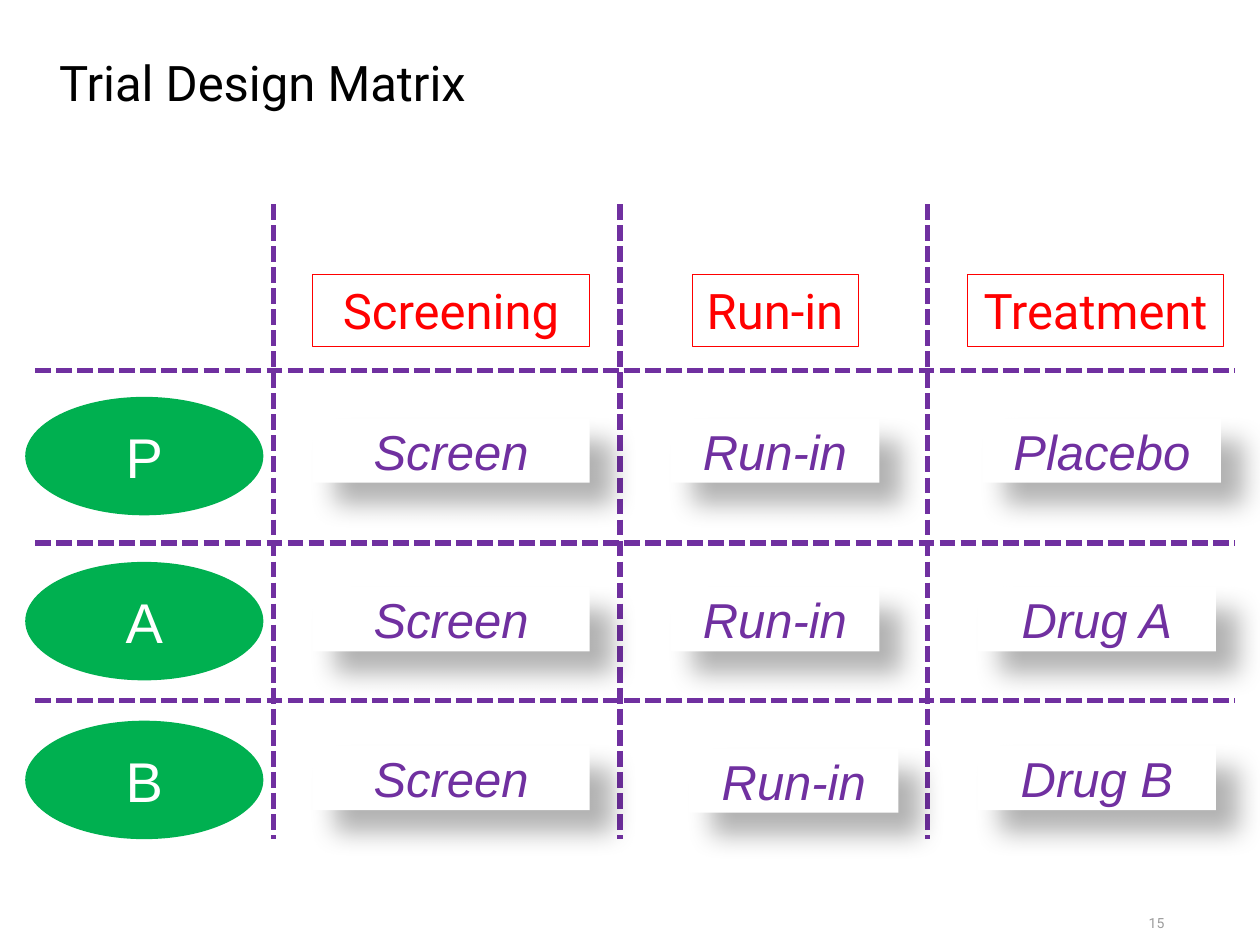
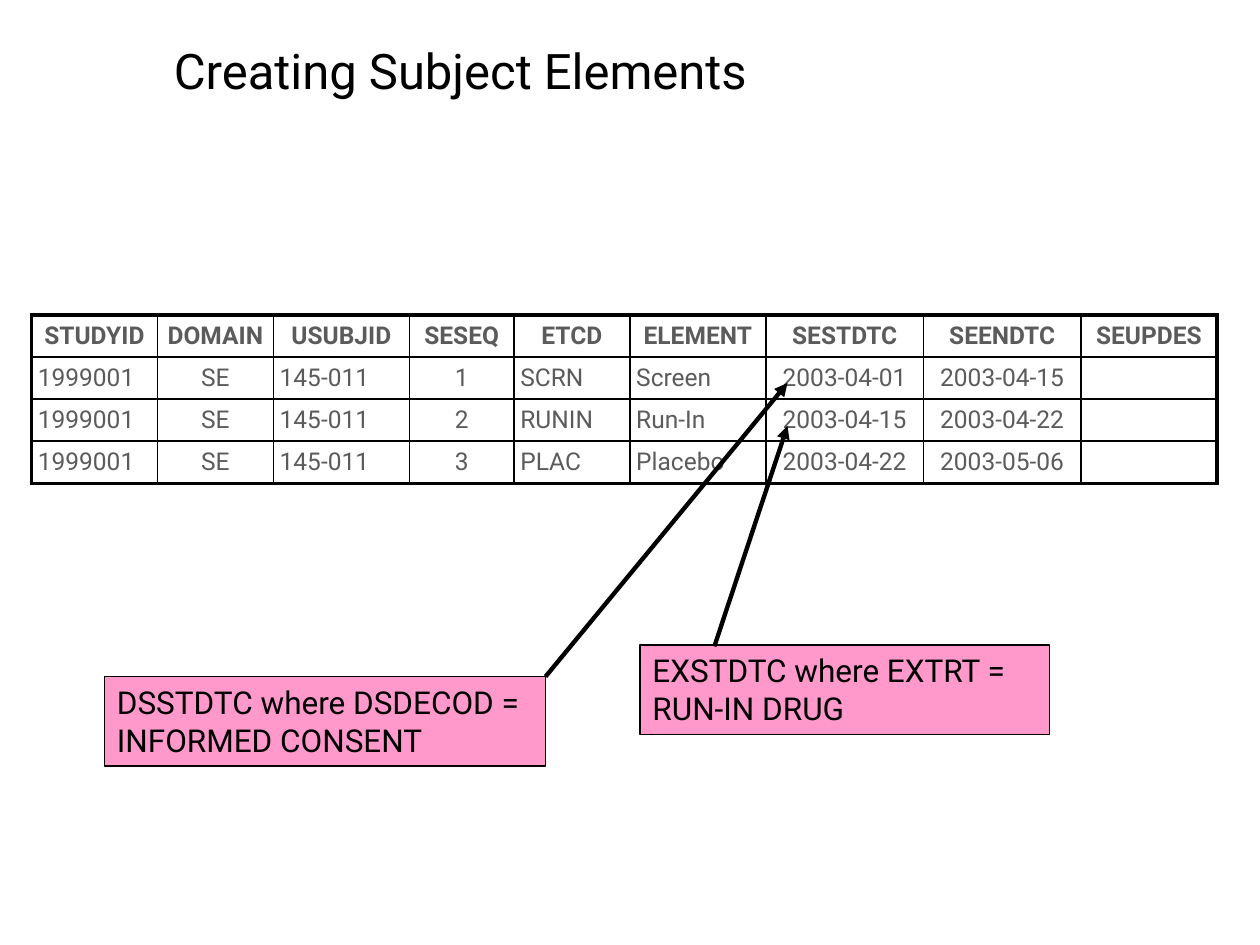
"""Build two slides on trial design: the design matrix and the subject elements table."""
import lxml.etree
import pptx
import pptx.dml.color
import pptx.enum.dml
import pptx.enum.shapes
import pptx.enum.text
import pptx.oxml.ns
import pptx.util

PX = 9144
COLORS = {
    "black": "000000",
    "white": "FFFFFF",
    "purple": "7030A0",
    "red": "FF0000",
    "green": "00B050",
    "pink": "FF99CC",
    "cell_text": "5B5B5B",
    "page_number": "9C9C9C",
}
RGB = {name: pptx.dml.color.RGBColor.from_string(code) for name, code in COLORS.items()}
ALIGN = pptx.enum.text.PP_ALIGN
ANCHOR = pptx.enum.text.MSO_ANCHOR
SHAPE = pptx.enum.shapes.MSO_SHAPE
qn = pptx.oxml.ns.qn


def add_box(slide, kind, box, text, size, color, font="Roboto", fill=None, outline=None,
            align=ALIGN.CENTER, anchor=ANCHOR.TOP):
    """Add a shape, or a text box when kind is None, holding one paragraph."""
    lengths = [value * PX for value in box]
    if kind is None:
        shape = slide.shapes.add_textbox(*lengths)
    else:
        shape = slide.shapes.add_shape(kind, *lengths)
    shape.shadow.inherit = False
    if fill:
        shape.fill.solid()
        shape.fill.fore_color.rgb = RGB[fill]
    else:
        shape.fill.background()
    if outline:
        line_color, width = outline
        shape.line.color.rgb = RGB[line_color]
        shape.line.width = pptx.util.Pt(width)
    else:
        shape.line.fill.background()
    frame = shape.text_frame
    frame.word_wrap = True
    frame.vertical_anchor = anchor
    frame.text = text
    paragraph = frame.paragraphs[0]
    paragraph.alignment = align
    run_font = paragraph.runs[0].font
    run_font.name = font
    run_font.size = pptx.util.Pt(size)
    run_font.color.rgb = RGB[color]
    return shape


def add_line(slide, start, end, color, width):
    """Add a straight connector without a shadow."""
    points = [value * PX for value in (*start, *end)]
    connector = slide.shapes.add_connector(pptx.enum.shapes.MSO_CONNECTOR.STRAIGHT, *points)
    connector.line.color.rgb = RGB[color]
    connector.line.width = pptx.util.Pt(width)
    lxml.etree.SubElement(connector._element.spPr, qn("a:effectLst"))
    return connector


presentation = pptx.Presentation()
presentation.slide_width = 1000 * PX
presentation.slide_height = 750 * PX

titles = [
    ("Trial Design Matrix", (47, 42, 900, 108)),
    ("Creating Subject Elements", (138, 32, 829, 44)),
]
slides = []
for text, box in titles:
    slide = presentation.slides.add_slide(presentation.slide_layouts[6])
    title = add_box(slide, None, box, text, 28, "black", align=ALIGN.LEFT)
    frame = title.text_frame
    frame.margin_left = frame.margin_top = frame.margin_right = frame.margin_bottom = 0
    slides.append(slide)
matrix_slide, elements_slide = slides

add_box(matrix_slide, None, (835, 715, 99, 35), "15", 8, "page_number",
        align=ALIGN.RIGHT, anchor=ANCHOR.MIDDLE)

grid_lines = [((x, 162), (x, 666)) for x in (217, 492, 736)]
grid_lines += [((28, y), (980, y)) for y in (294, 431, 556)]
for start, end in grid_lines:
    connector = add_line(matrix_slide, start, end, "purple", 3)
    connector.line.dash_style = pptx.enum.dml.MSO_LINE.SQUARE_DOT

epochs = [("Screening", 248, 220), ("Run-in", 549, 132), ("Treatment", 768, 203)]
for text, left, width in epochs:
    heading = add_box(matrix_slide, SHAPE.RECTANGLE, (left, 218, width, 57), text, 28, "red",
                      outline=("red", 0.25))
    heading.text_frame.word_wrap = text == "Screening"

arms = [
    ("P", 315, [("Screen", 248, 332, 220), ("Run-in", 532, 332, 166), ("Placebo", 780, 332, 189)]),
    ("A", 446, [("Screen", 248, 466, 220), ("Run-in", 532, 466, 166), ("Drug A", 776, 466, 189)]),
    ("B", 572, [("Screen", 248, 592, 220), ("Run-in", 547, 594, 166), ("Drug B", 776, 592, 189)]),
]
for arm, arm_top, elements in arms:
    add_box(matrix_slide, SHAPE.OVAL, (20, arm_top, 189, 94), arm, 32, "white",
            font="Arial", fill="green", anchor=ANCHOR.MIDDLE)
    for text, left, top, width in elements:
        element = add_box(matrix_slide, SHAPE.RECTANGLE, (left, top, width, 51), text, 28,
                          "purple", font="Arial", fill="white", anchor=ANCHOR.MIDDLE)
        element.text_frame.paragraphs[0].runs[0].font.italic = True
        effects = element._element.spPr.find(qn("a:effectLst"))
        shadow = lxml.etree.SubElement(
            effects, qn("a:outerShdw"), blurRad=str(pptx.util.Pt(15)),
            dist=str(pptx.util.Pt(18)), dir="2700000", algn="ctr", rotWithShape="0")
        shadow_color = lxml.etree.SubElement(shadow, qn("a:srgbClr"), val=COLORS["black"])
        lxml.etree.SubElement(shadow_color, qn("a:alpha"), val="30000")

rows = [
    ("STUDYID", "DOMAIN", "USUBJID", "SESEQ", "ETCD", "ELEMENT", "SESTDTC", "SEENDTC", "SEUPDES"),
    ("1999001", "SE", "145-011", "1", "SCRN", "Screen", "2003-04-01", "2003-04-15", ""),
    ("1999001", "SE", "145-011", "2", "RUNIN", "Run-In", "2003-04-15", "2003-04-22", ""),
    ("1999001", "SE", "145-011", "3", "PLAC", "Placebo", "2003-04-22", "2003-05-06", ""),
]
column_widths = [100, 92, 108, 83, 92, 108, 125, 125, 108]
left_aligned_columns = {0, 2, 4, 5}
row_height = 33
last_row, last_column = len(rows) - 1, len(column_widths) - 1
table = elements_slide.shapes.add_table(
    len(rows), len(column_widths), 25 * PX, 250 * PX,
    sum(column_widths) * PX, row_height * len(rows) * PX).table
table.first_row = False
table.horz_banding = False
for column, width in zip(table.columns, column_widths):
    column.width = width * PX
for row_index, values in enumerate(rows):
    table.rows[row_index].height = row_height * PX
    for column_index, value in enumerate(values):
        cell = table.cell(row_index, column_index)
        cell.margin_left = cell.margin_right = cell.margin_top = cell.margin_bottom = 5 * PX
        outer_sides = {
            "a:lnL": column_index == 0,
            "a:lnR": column_index == last_column,
            "a:lnT": row_index == 0,
            "a:lnB": row_index == last_row,
        }
        properties = cell._tc.get_or_add_tcPr()
        for side, is_outer in outer_sides.items():
            border = lxml.etree.SubElement(
                properties, qn(side), w=str(pptx.util.Pt(2.25 if is_outer else 1)))
            border_fill = lxml.etree.SubElement(border, qn("a:solidFill"))
            lxml.etree.SubElement(border_fill, qn("a:srgbClr"), val=COLORS["black"])
        cell.fill.background()
        cell.text_frame.text = value
        paragraph = cell.text_frame.paragraphs[0]
        is_left = row_index > 0 and column_index in left_aligned_columns
        paragraph.alignment = ALIGN.LEFT if is_left else ALIGN.CENTER
        for run in paragraph.runs:
            run.font.name = "Roboto"
            run.font.size = pptx.util.Pt(14)
            run.font.bold = row_index == 0
            run.font.color.rgb = RGB["cell_text"]
        if not value:
            lxml.etree.SubElement(paragraph._p, qn("a:endParaRPr"), sz="1400")

callouts = [
    ("DSSTDTC where DSDECOD = INFORMED CONSENT", (83, 537, 350, 71), (433, 537), (625, 304)),
    ("EXSTDTC where EXTRT = RUN-IN DRUG", (508, 512, 325, 71), (567, 513), (625, 338)),
]
for text, box, start, end in callouts:
    add_box(elements_slide, SHAPE.RECTANGLE, box, text, 18, "black", fill="pink",
            outline=("black", 0.75), align=ALIGN.LEFT)
    arrow = add_line(elements_slide, start, end, "black", 2.5)
    lxml.etree.SubElement(arrow.line._get_or_add_ln(), qn("a:tailEnd"), type="triangle")

presentation.save("out.pptx")
